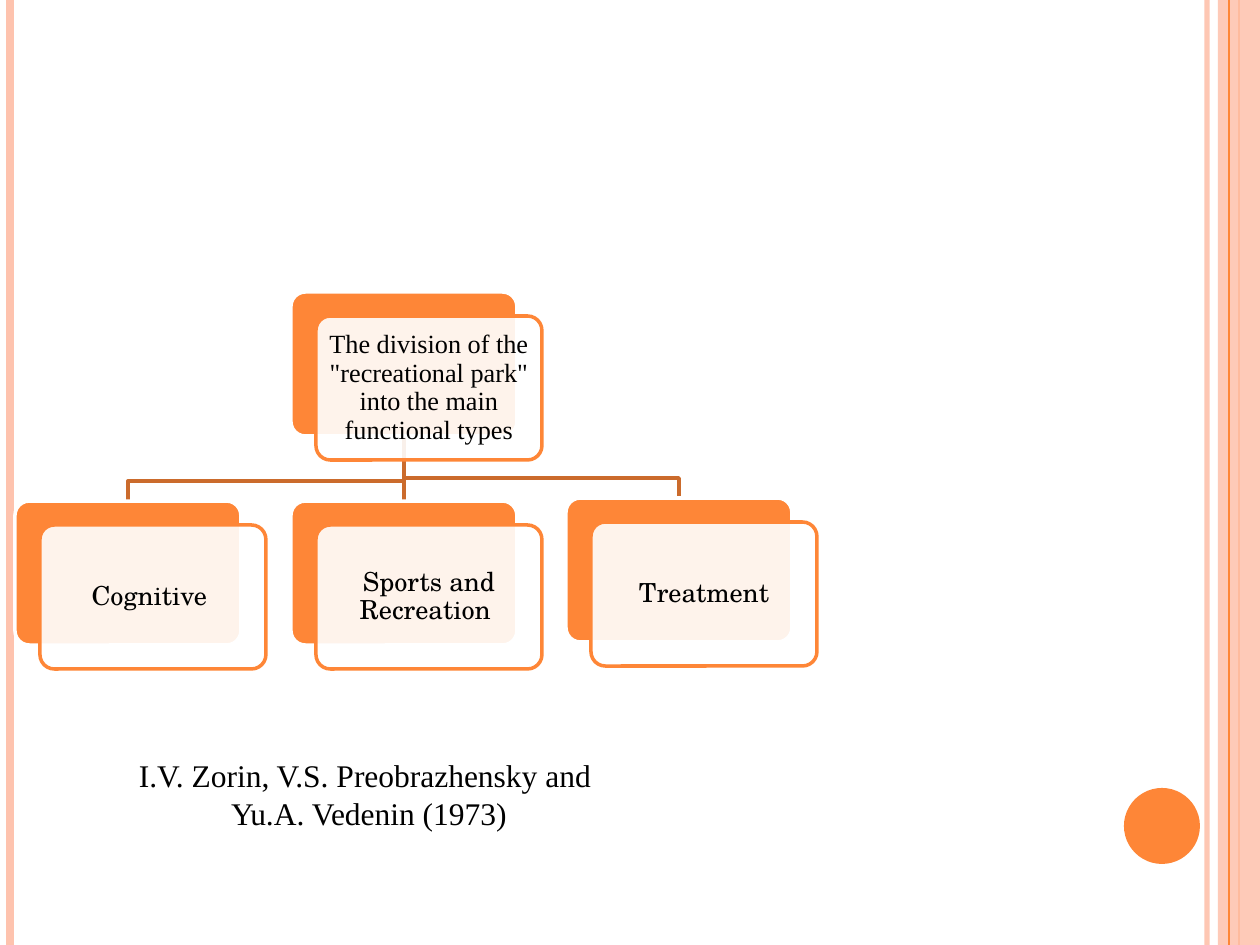
from lxml import etree
from pptx import Presentation
from pptx.dml.color import RGBColor
from pptx.enum import shapes as kinds, text as txt
from pptx.oxml.ns import qn
from pptx.util import Pt

PX = 914400 / 126
ORANGE = RGBColor(0xFE, 0x86, 0x37)
PEACH = RGBColor(0xFE, 0xC3, 0xAE)
BROWN = RGBColor(0xCB, 0x6B, 0x2C)
WHITE = RGBColor(0xFF, 0xFF, 0xFF)
BLACK = RGBColor(0, 0, 0)
SERIF, SCHOOL = "Times New Roman", "TeX Gyre Schola"
WIDE, HIGH = 1260, 945

# x, colour, points, opacity in percent
RULES = [(1207, PEACH, 3, 93), (10, PEACH, 4.5, 100), (1239, ORANGE, 1.5, 100)]
EDGE = (1229, ORANGE, 0.75, 100)
# left, top, words, font
ROOT = (291, 292, 'The division of the "recreational park" into the main functional types', SERIF)
TYPES = [
    (15, 501, "Cognitive ", SCHOOL),
    (291, 501, "Sports and Recreation ", SCHOOL),
    (566, 498, "Treatment", SCHOOL),
]
AUTHORS = ["I.V. Zorin, V.S. Preobrazhensky and ", "Yu.A. Vedenin (1973)"]
CARD_W, CARD_H, SHIFT, RISE = 226, 144, 25, 20


def emu(*vals):
    return [round(v * PX) for v in vals]


def fade(fmt, pct):
    """Set the opacity of a solid fill or line colour."""
    if pct < 100:
        clr = next(fmt.iter(qn("a:srgbClr")))
        etree.SubElement(clr, qn("a:alpha")).set("val", str(pct * 1000))


def stroke(item, color, size):
    item.line.color.rgb = color
    item.line.width = Pt(size)


def link(x1, y1, x2, y2, color, size, pct=100):
    line = slide.shapes.add_connector(kinds.MSO_CONNECTOR.STRAIGHT, *emu(x1, y1, x2, y2))
    stroke(line, color, size)
    props = line._element.spPr
    fade(props, pct)
    etree.SubElement(props, qn("a:effectLst"))
    return line


def block(kind, box, fill, pct=100):
    item = slide.shapes.add_shape(kind, *emu(*box))
    item.shadow.inherit = False
    item.fill.solid()
    item.fill.fore_color.rgb = fill
    fade(item._element.spPr, pct)
    item.line.fill.background()
    return item


def write(frame, lines, font, size, gap=1.0):
    frame.word_wrap = True
    for i, line in enumerate(lines):
        para = frame.add_paragraph() if i else frame.paragraphs[0]
        para.alignment = txt.PP_ALIGN.CENTER
        para.line_spacing = gap
        run = para.add_run()
        run.text = line
        for key, val in {"name": font, "size": Pt(size)}.items():
            setattr(run.font, key, val)
        run.font.color.rgb = BLACK


def card(left, top, words, font):
    """Draw an orange card with a pale one over it; return the orange one."""
    kind = kinds.MSO_SHAPE.ROUNDED_RECTANGLE
    back = block(kind, (left, top, CARD_W, CARD_H), ORANGE)
    front = block(kind, (left + SHIFT, top + SHIFT - 1, CARD_W, CARD_H), WHITE, 90)
    for item, color in ((back, WHITE), (front, ORANGE)):
        item.adjustments[0] = 0.1
        stroke(item, color, 2)
    frame = front.text_frame
    frame.vertical_anchor = txt.MSO_ANCHOR.MIDDLE
    for side in ("left", "top", "right", "bottom"):
        setattr(frame, f"margin_{side}", emu(8)[0])
    write(frame, [words], font, 15, 0.9)
    return back


def branch(x, y, end_x, end_y):
    bus = end_y - RISE
    path = slide.shapes.build_freeform(x, y, scale=PX)
    path.add_line_segments([(x, bus), (end_x, bus), (end_x, end_y)], close=False)
    item = path.convert_to_shape()
    item.shadow.inherit = False
    item.fill.background()
    stroke(item, BROWN, 2)


deck = Presentation()
deck.slide_width, deck.slide_height = emu(WIDE, HIGH)
slide = deck.slides.add_slide(deck.slide_layouts[6])

for x, *look in RULES:
    link(x, 0, x, HIGH, *look)
block(kinds.MSO_SHAPE.RECTANGLE, (1218, 0, 42, HIGH), PEACH, 87)
x, *look = EDGE
link(x, 0, x, HIGH, *look)
block(kinds.MSO_SHAPE.OVAL, (1124, 788, 76, 76), ORANGE)

mid, base = ROOT[0] + CARD_W // 2, ROOT[1] + CARD_H
for left, top, *_ in (TYPES[2], TYPES[0]):
    branch(mid, base, left + CARD_W // 2, top)
stem = link(mid, base, mid, TYPES[1][1], BROWN, 2)
root = card(*ROOT)
cards = [card(*kind) for kind in TYPES]
stem.begin_connect(root, 2)
stem.end_connect(cards[1], 0)

note = slide.shapes.add_textbox(*emu(54, 750, 630, 89)).text_frame
write(note, AUTHORS, SERIF, 18)
note.auto_size = txt.MSO_AUTO_SIZE.SHAPE_TO_FIT_TEXT

deck.save("out.pptx")
